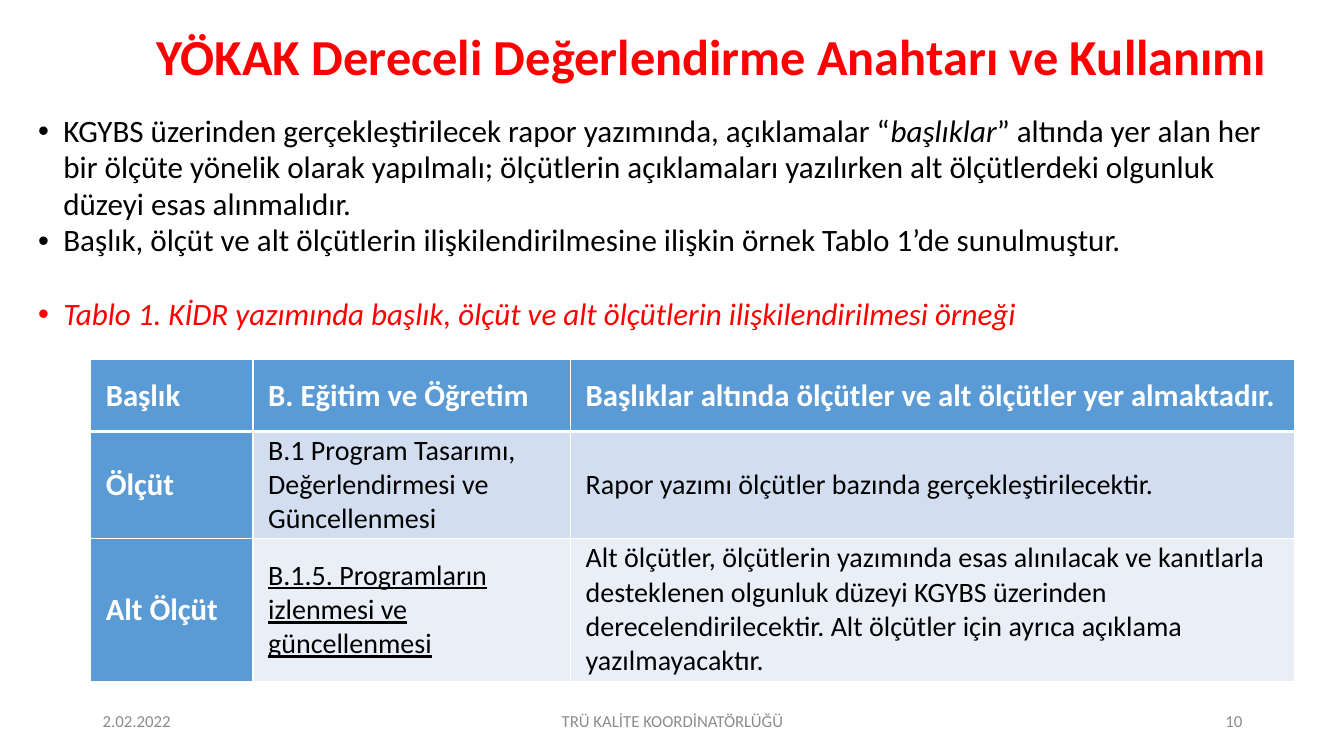
import pptx
import pptx.dml.color
import pptx.enum.text
import pptx.oxml.ns
import pptx.util
from lxml import etree

ALIGN = pptx.enum.text.PP_ALIGN
ANCHOR = pptx.enum.text.MSO_ANCHOR
RED, BLACK, WHITE, GREY = "FF0000", "000000", "FFFFFF", "8C8C8C"
BLUE, BAND_DARK, BAND_LIGHT = "5B9BD5", "D2DEEF", "EAEFF7"


def color(value):
    return pptx.dml.color.RGBColor.from_string(value)


def add_xml(parent, tag, **attrs):
    return etree.SubElement(parent, pptx.oxml.ns.qn(tag), **attrs)


class SlideBuilder:
    """Draws styled elements on a slide, with lengths in percent of its size."""

    font = "Calibri"

    def __init__(self, prs):
        self.prs = prs
        self.slide = prs.slides.add_slide(prs.slide_layouts[6])

    def x(self, share):
        return round(self.prs.slide_width * share / 100)

    def y(self, share):
        return round(self.prs.slide_height * share / 100)

    def place(self, left, top, width, height):
        return self.x(left), self.y(top), self.x(width), self.y(height)

    def style(self, p, size, fill, bold=False, italic=False):
        p.font.name = self.font
        p.font.size = pptx.util.Pt(size)
        p.font.color.rgb = color(fill)
        p.font.bold = bold
        p.font.italic = italic

    def frame(self, box, anchor):
        tf = self.slide.shapes.add_textbox(*self.place(*box)).text_frame
        tf.word_wrap = True
        tf.vertical_anchor = anchor
        return tf

    def text(self, box, text, size, fill, align, bold=False):
        p = self.frame(box, ANCHOR.MIDDLE).paragraphs[0]
        p.text = text
        p.alignment = align
        self.style(p, size, fill, bold)

    def bullets(self, box, items, size):
        tf = self.frame(box, ANCHOR.TOP)
        for i, (runs, fill, italic, before) in enumerate(items):
            p = tf.paragraphs[0] if i == 0 else tf.add_paragraph()
            p.line_spacing = 0.98
            if before:
                p.space_before = pptx.util.Pt(before)
            indent = pptx.util.Inches(0.25)
            pPr = p._p.get_or_add_pPr()
            pPr.set("marL", str(indent))
            pPr.set("indent", str(-indent))
            add_xml(pPr, "a:buFont", typeface="Arial")
            add_xml(pPr, "a:buChar", char="•")
            self.style(p, size, fill, italic=italic)
            for text, emphasis in runs:
                r = p.add_run()
                r.text = text
                if emphasis:
                    r.font.italic = True

    def borders(self, cell, **widths):
        tcPr = cell._tc.get_or_add_tcPr()
        for side in "LRTB":
            width = pptx.util.Pt(widths.get(side, 1))
            ln = add_xml(tcPr, f"a:ln{side}", w=str(width))
            add_xml(add_xml(ln, "a:solidFill"), "a:srgbClr", val=WHITE)

    def cell(self, cell, text, fill, heading, underline):
        cell.fill.solid()
        cell.fill.fore_color.rgb = color(fill)
        cell.vertical_anchor = ANCHOR.MIDDLE
        cell.margin_left = cell.margin_right = pptx.util.Inches(0.07)
        cell.margin_top = cell.margin_bottom = 0
        p = cell.text_frame.paragraphs[0]
        p.text = text
        p._p.get_or_add_pPr().set("marL", str(pptx.util.Inches(0.08)))
        self.style(p, 22 if heading else 20, WHITE if heading else BLACK, heading)
        if underline:
            p.runs[0].font.underline = True

    def table(self, left, top, widths, heights, rows, bands, underlined):
        box = self.place(left, top, sum(widths), sum(heights))
        table = self.slide.shapes.add_table(len(rows), len(widths), *box).table
        for column, width in zip(table.columns, widths):
            column.width = self.x(width)
        for i, (height, row) in enumerate(zip(heights, rows)):
            table.rows[i].height = self.y(height)
            for j, text in enumerate(row):
                heading = i == 0 or j == 0
                cell = table.cell(i, j)
                self.borders(cell, T=3 if i == 1 else 1, B=3 if i == 0 else 1)
                fill = BLUE if heading else bands[i - 1]
                self.cell(cell, text, fill, heading, (i, j) == underlined)


def main():
    prs = pptx.Presentation()
    prs.slide_width = pptx.util.Inches(13.33)
    prs.slide_height = pptx.util.Inches(7.5)
    s = SlideBuilder(prs)

    s.text((7.8, 1.87, 90.32, 10.93),
           "YÖKAK Dereceli Değerlendirme Anahtarı ve Kullanımı",
           36, RED, ALIGN.CENTER, bold=True)

    intro = [
        ("KGYBS üzerinden gerçekleştirilecek rapor yazımında, açıklamalar “", False),
        ("başlıklar", True),
        ("” altında yer alan her bir ölçüte yönelik olarak yapılmalı; ölçütlerin "
         "açıklamaları yazılırken alt ölçütlerdeki olgunluk düzeyi esas alınmalıdır.",
         False),
    ]
    example = [("Başlık, ölçüt ve alt ölçütlerin ilişkilendirilmesine ilişkin örnek "
                "Tablo 1’de sunulmuştur.", False)]
    caption = [("Tablo 1. KİDR yazımında başlık, ölçüt ve alt ölçütlerin "
                "ilişkilendirilmesi örneği", False)]
    s.bullets((2.1, 14.27, 95.2, 33.07), [
        (intro, BLACK, False, 0),
        (example, BLACK, False, 0),
        (caption, RED, True, 26.6),
    ], 22.2)

    rows = [
        ("Başlık", "B. Eğitim ve Öğretim",
         "Başlıklar altında ölçütler ve alt ölçütler yer almaktadır."),
        ("Ölçüt", "B.1 Program Tasarımı, Değerlendirmesi ve Güncellenmesi",
         "Rapor yazımı ölçütler bazında gerçekleştirilecektir."),
        ("Alt Ölçüt", "B.1.5. Programların izlenmesi ve güncellenmesi",
         "Alt ölçütler, ölçütlerin yazımında esas alınılacak ve kanıtlarla "
         "desteklenen olgunluk düzeyi KGYBS üzerinden derecelendirilecektir. "
         "Alt ölçütler için ayrıca açıklama yazılmayacaktır."),
    ]
    s.table(6.75, 47.6, (12.08, 23.63, 53.86), (9.47, 14.13, 18.93),
            rows, (BAND_DARK, BAND_LIGHT), underlined=(2, 1))

    for left, width, text, align in [
        (6.9, 22.5, "2.02.2022", ALIGN.LEFT),
        (33.16, 33.76, "TRÜ KALİTE KOORDİNATÖRLÜĞÜ", ALIGN.CENTER),
        (70.67, 22.5, "10", ALIGN.RIGHT),
    ]:
        s.text((left, 92.67, width, 5.33), text, 12, GREY, align)

    prs.save("out.pptx")


if __name__ == "__main__":
    main()
